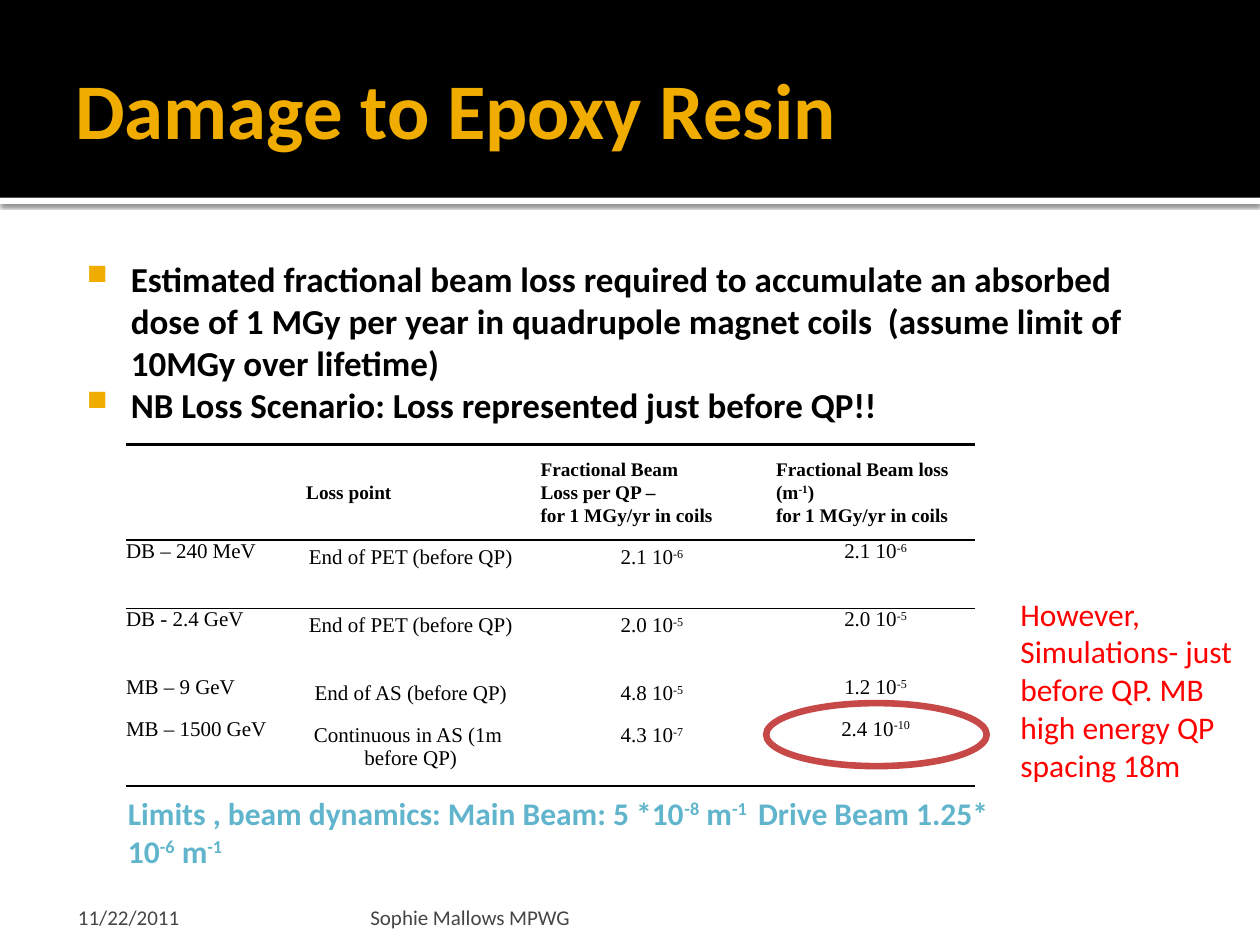
from lxml.etree import SubElement
from pptx import Presentation
from pptx.dml.color import RGBColor
from pptx.enum.shapes import MSO_SHAPE as Shape
from pptx.enum.text import MSO_ANCHOR as Anchor, PP_ALIGN as Align
from pptx.oxml.ns import qn
from pptx.util import Pt

BLACK = RGBColor(0, 0, 0)
WHITE = RGBColor(255, 255, 255)
GOLD = RGBColor(0xF0, 0xAD, 0x00)
TEAL = RGBColor(0x60, 0xB5, 0xCC)
RED = RGBColor(255, 0, 0)
BRICK = RGBColor(0xC6, 0x48, 0x47)
GREY = RGBColor(0x45, 0x45, 0x45)

NO_STYLE = "{2D5ABB26-0587-4C30-8999-92F81FD0307C}"
COLUMN_WIDTHS = [95.8, 133.9, 141.8, 113.8]
ROW_HEIGHTS = [54.7, 38.9, 38.9, 23.8, 38.9]
RULES = {0: {"lnT": 1.5, "lnB": 1}, 1: {"lnT": 1}, 4: {"lnB": 1.5}}
HEADER = ["", "Loss point",
          "Fractional Beam\nLoss per QP –\nfor 1 MGy/yr in coils",
          "Fractional Beam loss\n(m^-1^)\nfor 1 MGy/yr in coils"]
LOSSES = [
    ["DB – 240 MeV", "End of PET (before QP)", "2.1 10^-6^", "2.1 10^-6^"],
    ["DB - 2.4 GeV", "End of PET (before QP)", "2.0 10^-5^", "2.0 10^-5^"],
    ["MB – 9 GeV", "End of AS (before QP)", "4.8 10^-5^", "1.2 10^-5^"],
    ["MB – 1500 GeV", "Continuous in AS (1m \nbefore QP)", "4.3 10^-7^", "2.4 10^-10^"],
]


def write_text(frame, text, size, color, font="Calibri", bold=False,
               align=Align.LEFT, spacing=None):
    """Lines become paragraphs; text between carets is superscript."""
    for number, line in enumerate(text.split("\n")):
        para = frame.add_paragraph() if number else frame.paragraphs[0]
        para.alignment = align
        if spacing:
            para.line_spacing = Pt(spacing)
        for index, piece in enumerate(line.split("^")):
            if not piece:
                continue
            span = para.add_run()
            span.text = piece
            span.font.size = Pt(size)
            span.font.name = font
            span.font.bold = bold
            span.font.color.rgb = color
            if index % 2:
                span._r.get_or_add_rPr().set("baseline", "30000")


def add_text(page, area, text, margins=(7.2, 3.6, 7.2, 3.6), anchor=Anchor.TOP, **style):
    frame = page.shapes.add_textbox(*map(Pt, area)).text_frame
    frame.word_wrap = True
    frame.vertical_anchor = anchor
    (frame.margin_left, frame.margin_top,
     frame.margin_right, frame.margin_bottom) = map(Pt, margins)
    write_text(frame, text, **style)
    return frame


def add_bullets(frame):
    for para in frame.paragraphs:
        props = para._p.get_or_add_pPr()
        props.set("marL", str(Pt(34.5)))
        props.set("indent", str(Pt(-25.2)))
        color = SubElement(props, qn("a:buClr"))
        SubElement(color, qn("a:srgbClr"), val=str(GOLD))
        SubElement(props, qn("a:buSzPct"), val="80000")
        SubElement(props, qn("a:buChar"), char="■")


def add_shape(page, kind, area, fill=None, line=None, width=0):
    shape = page.shapes.add_shape(kind, *map(Pt, area))
    shape.shadow.inherit = False
    if fill is None:
        shape.fill.background()
    else:
        shape.fill.solid()
        shape.fill.fore_color.rgb = fill
    if line is None:
        shape.line.fill.background()
    else:
        shape.line.color.rgb = line
        shape.line.width = Pt(width)
    return shape


def add_shadow(shape):
    effects = shape._element.spPr.find(qn("a:effectLst"))
    shadow = SubElement(effects, qn("a:outerShdw"), blurRad=str(Pt(2.5)),
                        dist=str(Pt(0.8)), dir="5400000", rotWithShape="0")
    color = SubElement(shadow, qn("a:srgbClr"), val=str(BLACK))
    SubElement(color, qn("a:alpha"), val="60000")


def add_rule(cell, side, width):
    rule = SubElement(cell._tc.get_or_add_tcPr(), qn(f"a:{side}"), w=str(Pt(width)))
    fill = SubElement(rule, qn("a:solidFill"))
    SubElement(fill, qn("a:srgbClr"), val=str(BLACK))


def fill_cell(cell, text, row, column):
    header = row == 0
    for side, width in RULES.get(row, {}).items():
        add_rule(cell, side, width)
    cell.fill.background()
    if column == 3 or (column == 0 and not header):
        cell.margin_left = cell.margin_right = cell.margin_top = cell.margin_bottom = 0
    cell.vertical_anchor = Anchor.MIDDLE if header else Anchor.TOP
    write_text(cell.text_frame, text, size=11 if header else 12, color=BLACK,
               font="Times New Roman", bold=header, spacing=13,
               align=Align.LEFT if header or column == 0 else Align.CENTER)


def add_loss_table(page):
    rows = [HEADER] + LOSSES
    frame = page.shapes.add_table(len(rows), len(HEADER), Pt(72), Pt(254),
                                  Pt(sum(COLUMN_WIDTHS)), Pt(sum(ROW_HEIGHTS)))
    table = frame.table
    table.first_row = table.horz_banding = False
    table._tbl.tblPr.find(qn("a:tableStyleId")).text = NO_STYLE
    for column, width in zip(table.columns, COLUMN_WIDTHS):
        column.width = Pt(width)
    for row, height in zip(table.rows, ROW_HEIGHTS):
        row.height = Pt(height)
    for row, texts in enumerate(rows):
        for column, text in enumerate(texts):
            fill_cell(table.cell(row, column), text, row, column)


def main():
    deck = Presentation()
    deck.slide_width, deck.slide_height = Pt(720), Pt(540)
    page = deck.slides.add_slide(deck.slide_layouts[6])

    add_shadow(add_shape(page, Shape.RECTANGLE, (0, 113, 720, 3.6), fill=WHITE))
    add_shape(page, Shape.RECTANGLE, (0, 0, 720, 113), fill=BLACK)
    add_text(page, (36, 12.2, 648, 98.6), "Damage to Epoxy Resin",
             margins=(7.2, 3.6, 3.6, 3.6), anchor=Anchor.MIDDLE,
             size=45, color=GOLD, bold=True)
    body = add_text(
        page, (36, 139.7, 648, 364.3),
        "Estimated fractional beam loss required to accumulate an absorbed dose of "
        "1 MGy per year in quadrupole magnet coils  (assume limit of 10MGy over lifetime)\n"
        "NB Loss Scenario: Loss represented just before QP!!",
        margins=(4.3, 7.2, 7.2, 3.6), size=20, color=BLACK, bold=True)
    add_bullets(body)

    add_loss_table(page)
    add_text(page, (66, 450, 528, 51),
             "Limits , beam dynamics: Main Beam: 5 *10^-8^ m^-1 ^ Drive Beam 1.25* 10^-6^ m^-1^",
             size=18, color=TEAL, bold=True)
    add_shape(page, Shape.OVAL, (437.8, 401.8, 126, 36), line=BRICK, width=3.78)
    add_text(page, (576, 336.2, 144, 116.6),
             "However,\nSimulations- just before QP. MB high energy QP spacing 18m",
             size=18, color=RED)

    add_text(page, (36, 509.8, 167.8, 21.6), "11/22/2011", margins=(8.6, 3.6, 3.6, 0),
             anchor=Anchor.BOTTOM, size=12, color=GREY)
    add_text(page, (208, 509.8, 433.4, 21.6), "Sophie Mallows MPWG",
             margins=(3.6, 3.6, 3.6, 0), anchor=Anchor.BOTTOM, size=12, color=GREY)
    deck.save("out.pptx")


if __name__ == "__main__":
    main()
